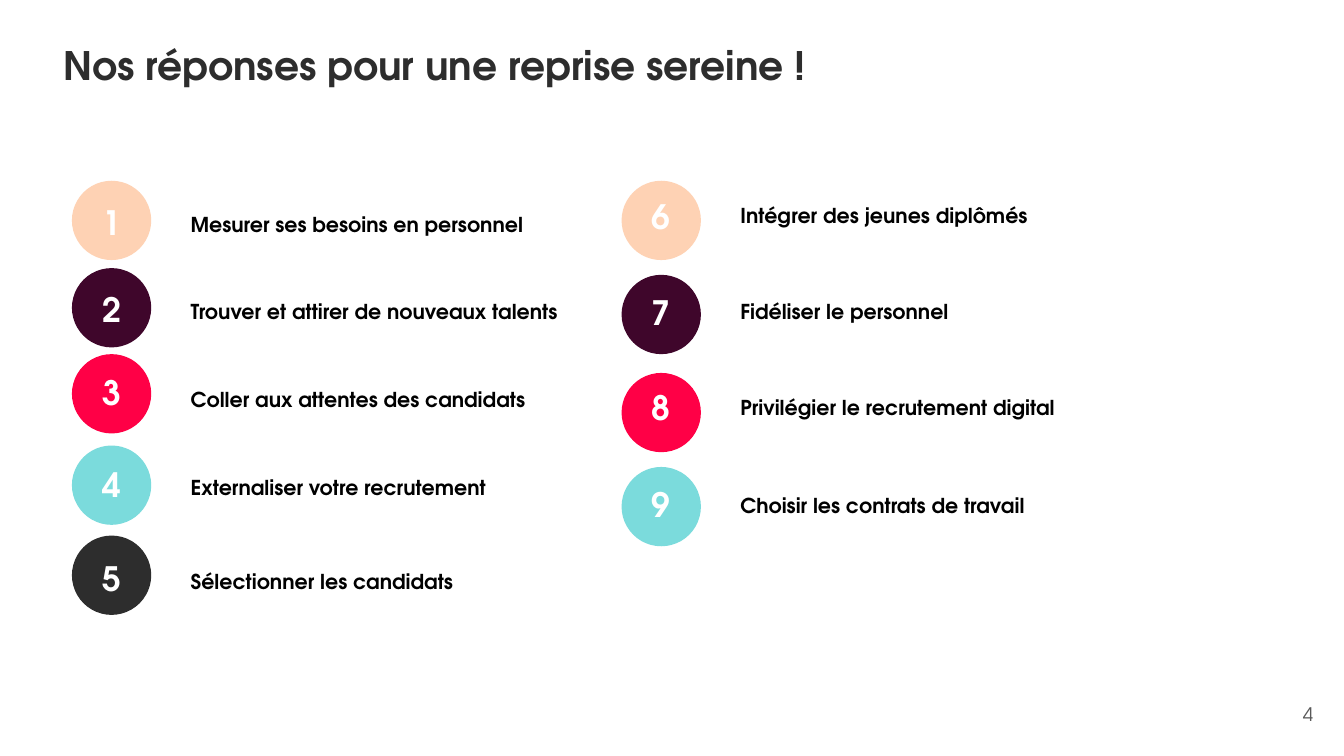
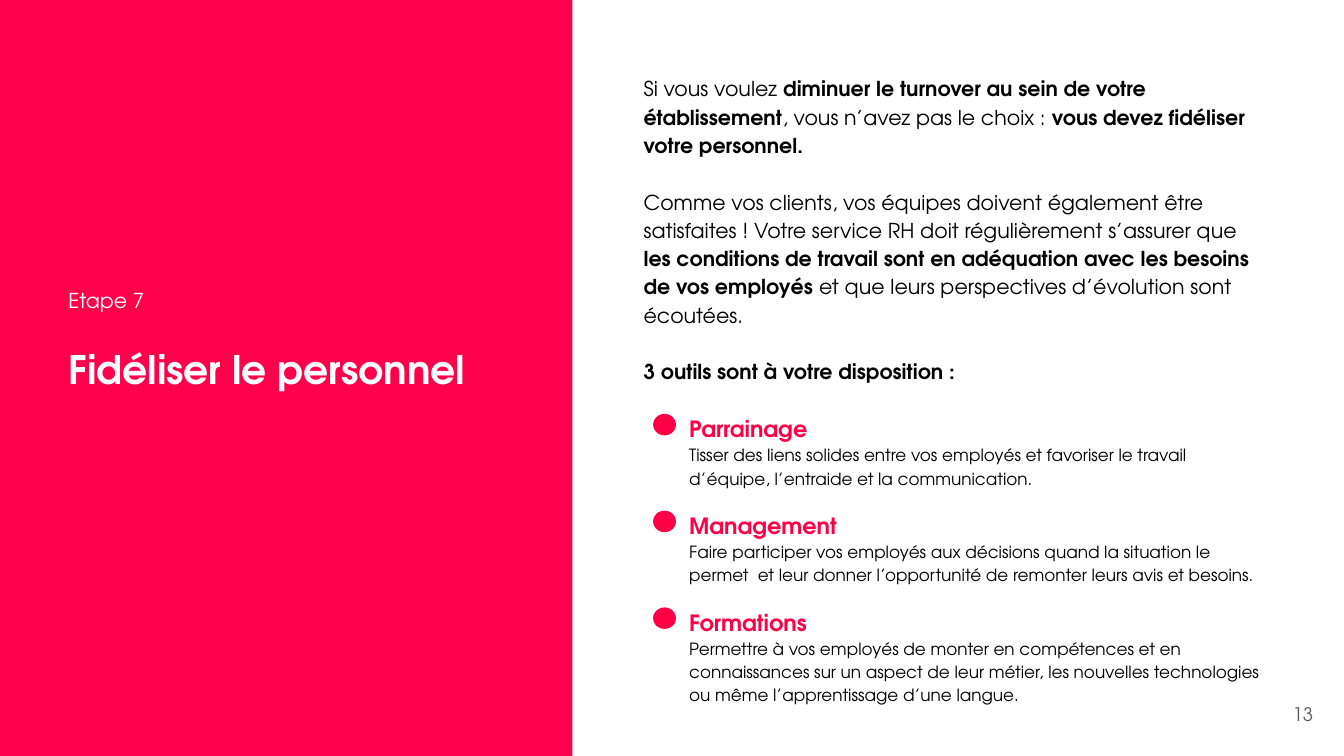
import pptx
import pptx.util
import pptx.dml.color
import pptx.enum.shapes
import pptx.enum.text

CELL = pptx.util.Inches(0.1)
COLS, ROWS = 100, 56.25
FONT = "TeX Gyre Adventor"
BLACK, WHITE, GREY, DARK = "000000", "FFFFFF", "595959", "2D2D2D"
RED, PANEL_RED = "FF0046", "FF004A"
PALETTE = ["FED2B4", "3F062B", RED, "7BDBDC", DARK]
SHAPE = pptx.enum.shapes.MSO_SHAPE
ALIGN = pptx.enum.text.PP_ALIGN
ANCHOR = pptx.enum.text.MSO_ANCHOR
FIT = pptx.enum.text.MSO_AUTO_SIZE


def draw(s, kind, at, color, outline=False):
    sp = s.shapes.add_shape(kind, *[int(v * CELL) for v in at])
    sp.shadow.inherit = False
    sp.fill.solid()
    sp.fill.fore_color.rgb = pptx.dml.color.RGBColor.from_string(color)
    if outline:
        sp.line.color.rgb = pptx.dml.color.RGBColor.from_string(color)
        sp.line.width = pptx.util.Pt(0.75)
    else:
        sp.line.fill.background()


def write(sp, at, paragraphs, align=ALIGN.LEFT, spacing=1.0, middle=False, gap=0, bottom=1):
    sp.left, sp.top, sp.width, sp.height = [int(v * CELL) for v in at]
    tf = sp.text_frame
    tf.word_wrap = True
    tf.auto_size = FIT.NONE if middle else FIT.SHAPE_TO_FIT_TEXT
    tf.vertical_anchor = ANCHOR.MIDDLE if middle else ANCHOR.TOP
    tf.margin_left = tf.margin_right = tf.margin_top = CELL
    tf.margin_bottom = int(bottom * CELL)
    for i, runs in enumerate(paragraphs):
        p = tf.add_paragraph() if i else tf.paragraphs[0]
        p.alignment = align
        p.line_spacing = spacing
        p.space_before = pptx.util.Pt(gap if i else 0)
        for text, size, color, bold in runs:
            r = p.add_run()
            r.text = text
            r.font.name = FONT
            r.font.size = pptx.util.Pt(size)
            r.font.bold = bold
            r.font.color.rgb = pptx.dml.color.RGBColor.from_string(color)


prs = pptx.Presentation()
prs.slide_width, prs.slide_height = int(COLS * CELL), int(ROWS * CELL)
title_only = prs.slide_layouts[5]

s = prs.slides.add_slide(title_only)
write(s.shapes.title, (3.7, 2.7, 77.9, 4.3),
      [[("Nos réponses pour une reprise sereine !", 21, DARK, True)]], middle=True)

answer_columns = [
    (5.4, 34.4, [
        ("1", 13.5, 14, 14.5, "Mesurer ses besoins en personnel"),
        ("2", 20, 20.5, 21, "Trouver et attirer de nouveaux talents"),
        ("3", 26.4, 26.7, 27.5, "Coller aux attentes des candidats"),
        ("4", 33.2, 33.5, 34.1, "Externaliser votre recrutement"),
        ("5", 39.9, 40.5, 41.1, "Sélectionner les candidats"),
    ]),
    (46.3, 45, [
        ("6", 13.5, 13.6, 13.8, "Intégrer des jeunes diplômés"),
        ("7", 20.5, 20.7, 21, "Fidéliser le personnel"),
        ("8", 27.8, 27.8, 28.1, "Privilégier le recrutement digital"),
        ("9", 34.8, 35, 35.4, "Choisir les contrats de travail"),
    ]),
]
for left, label_width, answers in answer_columns:
    for color, (number, circle_top, number_top, label_top, answer) in zip(PALETTE, answers):
        draw(s, SHAPE.OVAL, (left, circle_top, 5.8, 5.8), color, outline=True)
        write(s.shapes.add_textbox(0, 0, 0, 0), (left, number_top, 5.8, 5),
              [[(number, 18, WHITE, True)]], align=ALIGN.CENTER)
        write(s.shapes.add_textbox(0, 0, 0, 0), (left + 7.8, label_top, label_width, 3.9),
              [[(answer, 11, BLACK, True)]], align=ALIGN.JUSTIFY, spacing=1.15)

s = prs.slides.add_slide(title_only)
draw(s, SHAPE.RECTANGLE, (0, 0, 42.6, 56.4), PANEL_RED)
title = s.shapes.title
title.element.getparent().append(title.element)
write(title, (4.1, 19.3, 35.4, 23.2), [[("Fidéliser le personnel", 21, WHITE, True)]],
      spacing=1.15, middle=True, bottom=8.4)
write(s.shapes.add_textbox(0, 0, 0, 0), (4.1, 20.5, 31.3, 3.9),
      [[("Etape 7", 11, WHITE, False)]])

advice = [
    [("Si vous voulez ", False),
     ("diminuer le turnover au sein de votre établissement", True),
     (", vous n’avez pas le choix : ", False),
     ("vous devez fidéliser votre personnel.", True)],
    [("Comme vos clients, vos équipes doivent également être satisfaites ! "
      "Votre service RH doit régulièrement s’assurer que ", False),
     ("les conditions de travail sont en adéquation avec les besoins de vos employés ", True),
     ("et que leurs perspectives d’évolution sont écoutées.", False)],
    [("3 outils sont à votre disposition :", True)],
]
write(s.shapes.add_textbox(0, 0, 0, 0), (46.9, 4.4, 48.1, 25.2),
      [[(text, 11, BLACK, bold) for text, bold in runs] for runs in advice],
      spacing=1.15, gap=15.2)

tools = [
    ("Parrainage", 39.5, 7.6, [
        "Tisser des liens solides entre vos employés et favoriser le travail",
        "d’équipe, l’entraide et la communication."]),
    ("Management", 44.7, 7.6, [
        "Faire participer vos employés aux décisions quand la situation le permet  "
        "et leur donner l’opportunité de remonter leurs avis et besoins."]),
    ("Formations", 44.7, 9.3, [
        "Permettre à vos employés de monter en compétences et en connaissances sur un aspect "
        "de leur métier, les nouvelles technologies ou même l’apprentissage d’une langue."]),
]
for i, (tool, width, height, lines) in enumerate(tools):
    top = 29.6 + i * 7.2
    draw(s, SHAPE.OVAL, (48.6, top + 1.2, 1.7, 1.6), RED)
    write(s.shapes.add_textbox(0, 0, 0, 0), (50.3, top, width, height),
          [[(tool, 12, RED, True)]] + [[(line, 9, BLACK, False)] for line in lines],
          spacing=1.15)

for s, number in zip(prs.slides, ["4", "13"]):
    write(s.shapes.add_textbox(0, 0, 0, 0), (92.7, 51, 6, 4.3),
          [[(number, 10, GREY, False)]], align=ALIGN.RIGHT, middle=True)

prs.save("out.pptx")
